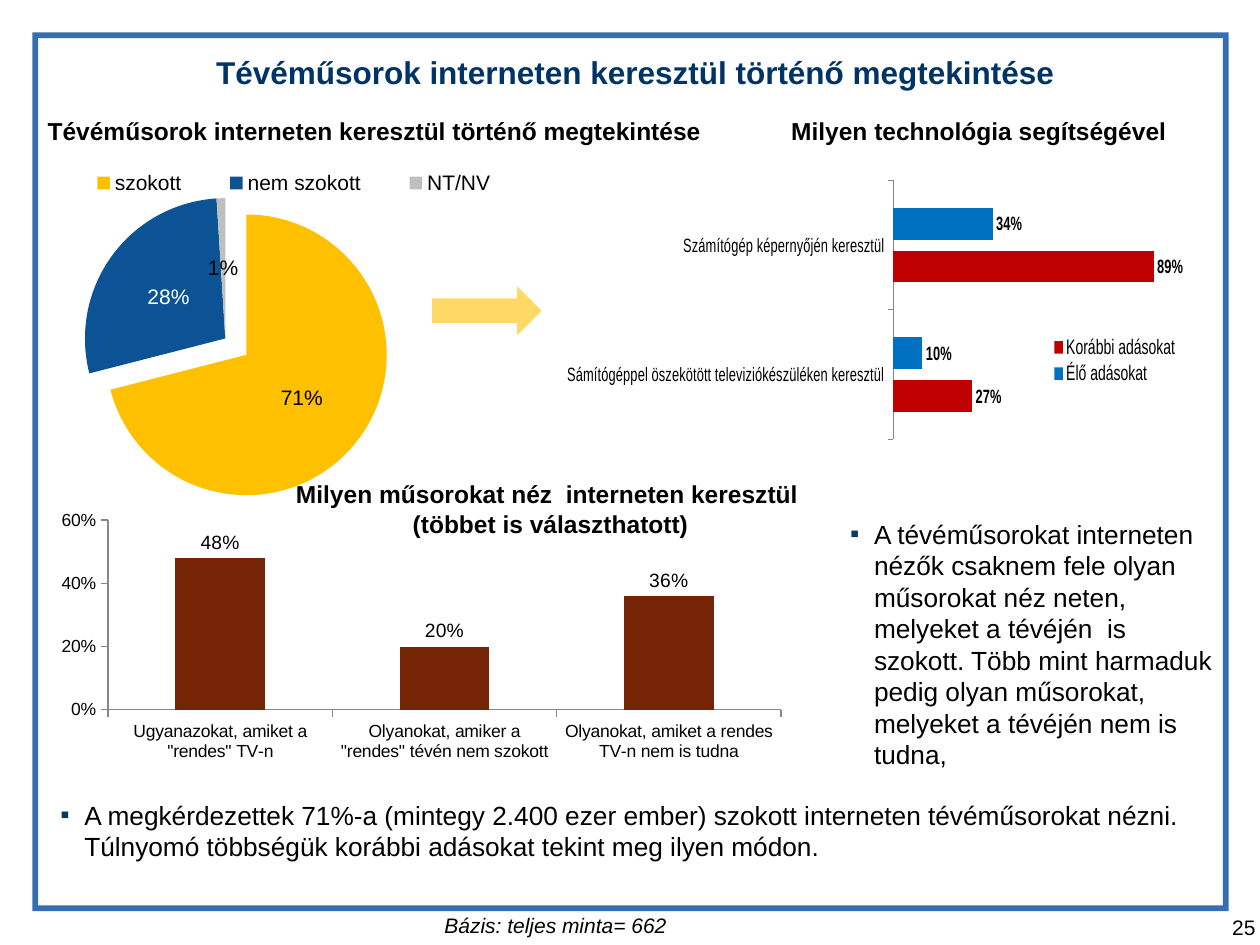
from lxml import etree
from pptx import Presentation
from pptx import util as u
from pptx.chart.data import CategoryChartData
from pptx.dml.color import RGBColor
from pptx.enum import chart as ch, shapes, text
from pptx.oxml import parse_xml
from pptx.oxml.ns import nsdecls, qn

BLACK = RGBColor(0, 0, 0)
WHITE = RGBColor(255, 255, 255)
NAVY = RGBColor(0x00, 0x33, 0x66)
FRAME_BLUE = RGBColor(0x09, 0x4F, 0xA3)
AMBER = RGBColor(0xFF, 0xC0, 0x00)
DEEP_BLUE = RGBColor(0x0B, 0x53, 0x94)
SILVER = RGBColor(0xBF, 0xBF, 0xBF)
BLUE = RGBColor(0x00, 0x70, 0xC0)
RED = RGBColor(0xC0, 0x00, 0x00)
BROWN = RGBColor(0x75, 0x25, 0x05)
PALE_AMBER = RGBColor(0xFF, 0xD9, 0x66)
AXIS_GREY = RGBColor(0x86, 0x86, 0x86)
BULLET_COLOR = RGBColor(0x07, 0x37, 0x63)

FRAME = (0.71, 0.71, 24, 17.6)
ARROW = (8.71, 5.77, 2.21, 0.99)

HEADING = dict(size=14, bold=True, wrap=False)
BULLET = dict(size=15, bullet="▪")
TEXTS = [
    ("Tévéműsorok interneten keresztül történő megtekintése", (0.71, 0.71, 24, 1.5),
     dict(size=18, bold=True, color=NAVY, align=text.PP_ALIGN.CENTER,
          anchor=text.MSO_ANCHOR.MIDDLE, margins=(0.2, 0, 0, 0))),
    ("Tévéműsorok interneten keresztül történő megtekintése", (0.71, 2.21, 13.74, 0.86), HEADING),
    ("Milyen technológia segítségével", (15.7, 2.21, 8.1, 0.86), HEADING),
    ("Milyen műsorokat néz  interneten keresztül \v(többet is választhatott)",
     (5.69, 9.53, 10.82, 1.45), dict(HEADING, align=text.PP_ALIGN.CENTER)),
    ("Bázis: teljes minta= 662", (8.71, 18.26, 5.03, 0.76), dict(size=12, italic=True, wrap=False)),
    ("A megkérdezettek 71%-a (mintegy 2.400 ezer ember) szokott interneten tévéműsorokat "
     "nézni. Túlnyomó többségük korábbi adásokat tekint meg ilyen módon.",
     (0.97, 15.98, 23.55, 1.55), BULLET),
    ("A tévéműsorokat interneten nézők csaknem fele olyan műsorokat néz neten, melyeket a "
     "tévéjén  is szokott. Több mint harmaduk pedig olyan műsorokat, melyeket a tévéjén "
     "nem is tudna,", (16.89, 10.31, 7.82, 5.38), BULLET),
    ("25", (23.88, 18.31, 1.68, 0.69), dict(size=12, align=text.PP_ALIGN.RIGHT)),
]

VIEWING = [("szokott", 71, AMBER), ("nem szokott", 28, DEEP_BLUE), ("NT/NV", 1, SILVER)]
TECHNOLOGY = ["Számítógép képernyőjén keresztül",
              "Sámítógéppel öszekötött televiziókészüléken keresztül"]
TECHNOLOGY_USE = [("Élő adásokat", (0.34, 0.10), BLUE), ("Korábbi adásokat", (0.89, 0.27), RED)]
PROGRAMMES = ['Ugyanazokat, amiket a "rendes" TV-n',
              'Olyanokat, amiker a "rendes" tévén nem szokott',
              "Olyanokat, amiket a rendes TV-n nem is tudna"]
PROGRAMME_USE = [("Műsorok", (0.48, 0.20, 0.36), BROWN)]


def cm(box):
    return [u.Cm(length) for length in box]


def style_font(font, size, color=BLACK, bold=False, italic=False):
    font.name, font.size = "Arial", u.Pt(size)
    font.bold, font.italic = bold, italic
    font.color.rgb = color


def add_text(slide, content, box, size, color=BLACK, bold=False, italic=False, wrap=True,
             align=text.PP_ALIGN.LEFT, anchor=text.MSO_ANCHOR.TOP,
             margins=(0.25, 0.13, 0.25, 0.13), bullet=None):
    frame = slide.shapes.add_textbox(*cm(box)).text_frame
    frame.word_wrap, frame.vertical_anchor = wrap, anchor
    frame.margin_left, frame.margin_top, frame.margin_right, frame.margin_bottom = cm(margins)
    paragraph = frame.paragraphs[0]
    paragraph.text, paragraph.alignment = content, align
    if bullet:
        properties = paragraph._p.get_or_add_pPr()
        properties.set("marL", str(u.Cm(0.48)))
        properties.set("indent", str(-u.Cm(0.48)))
        bullet_color = etree.SubElement(properties, qn("a:buClr"))
        etree.SubElement(bullet_color, qn("a:srgbClr"), val=str(BULLET_COLOR))
        etree.SubElement(properties, qn("a:buFont"), typeface="Arial")
        etree.SubElement(properties, qn("a:buChar"), char=bullet)
    for run in paragraph.runs:
        style_font(run.font, size, color, bold, italic)


def manual_layout(x, y, w, h, inner=False):
    target = '<c:layoutTarget val="inner"/>' if inner else ""
    sizes = "".join(f'<c:{tag} val="{value}"/>' for tag, value in zip("xywh", (x, y, w, h)))
    return parse_xml(f'<c:layout {nsdecls("c")}><c:manualLayout>{target}<c:xMode val="edge"/>'
                     f'<c:yMode val="edge"/>{sizes}</c:manualLayout></c:layout>')


def add_chart(slide, kind, box, categories, series, plot_layout, size, bold=False):
    data = CategoryChartData()
    data.categories = categories
    for name, values, _ in series:
        data.add_series(name, values)
    chart = slide.shapes.add_chart(kind, *cm(box), data).chart
    chart.has_title = chart.has_legend = False
    style_font(chart.font, size, bold=bold)
    area = chart._chartSpace.chart.plotArea
    for old in area.findall(qn("c:layout")):
        area.remove(old)
    area.insert(0, manual_layout(*plot_layout, inner=True))
    return chart


def add_legend(chart, position, layout, overlay):
    chart.has_legend = True
    chart.legend.position = position
    chart.legend.include_in_layout = overlay
    style_font(chart.legend.font, 12)
    chart.legend._element.find(qn("c:legendPos")).addnext(manual_layout(*layout))


def style_labels(labels, size, position, bold=False):
    labels.number_format, labels.number_format_is_linked = "0%", False
    labels.position = position
    style_font(labels.font, size, bold=bold)


def style_axis(axis, size):
    axis.has_major_gridlines = False
    axis.major_tick_mark = ch.XL_TICK_MARK.OUTSIDE
    axis.format.line.color.rgb = AXIS_GREY
    style_font(axis.tick_labels.font, size)


def add_bars(slide, kind, box, categories, series, plot_layout, gap, overlap, maximum,
             axis_size, bold=False):
    chart = add_chart(slide, kind, box, categories, series, plot_layout, 12, bold)
    plot = chart.plots[0]
    plot.gap_width, plot.overlap, plot.vary_by_categories = gap, overlap, False
    for bars, (_, _, color) in zip(plot.series, series):
        bars.format.fill.solid()
        bars.format.fill.fore_color.rgb = color
        bars.invert_if_negative = False
        style_labels(bars.data_labels, 11, ch.XL_LABEL_POSITION.OUTSIDE_END, bold)
        bars.data_labels.show_value = True
    for axis in (chart.category_axis, chart.value_axis):
        style_axis(axis, axis_size)
    values = chart.value_axis
    values.minimum_scale, values.maximum_scale, values.major_unit = 0, maximum, 0.2
    values.tick_labels.number_format = "0%"
    values.tick_labels.number_format_is_linked = False
    return chart


def add_viewing_pie(slide):
    names, shares, colors = zip(*VIEWING)
    chart = add_chart(slide, ch.XL_CHART_TYPE.PIE, (0.76, 2.39, 12.01, 7.65), names,
                      [("Megtekintés", shares, None)], (0.01, 0.21, 0.61, 0.74), 12)
    add_legend(chart, ch.XL_LEGEND_POSITION.TOP, (0.03, 0.12, 0.8, 0.1), False)
    chart.plots[0].vary_by_categories = True
    slices = chart.plots[0].series[0]
    for index, color in enumerate(colors):
        fill = slices.points[index].format.fill
        fill.solid()
        fill.fore_color.rgb = color
    explosion = parse_xml(f'<c:explosion {nsdecls("c")} val="19"/>')
    slices._element.find(qn("c:dPt")).find(qn("c:spPr")).addprevious(explosion)
    style_labels(slices.data_labels, 12, ch.XL_LABEL_POSITION.CENTER)
    not_viewing = slices.points[1].data_label
    style_font(not_viewing.font, 12, WHITE)
    not_viewing.position = ch.XL_LABEL_POSITION.CENTER
    for tag, shown in (("c:showVal", "0"), ("c:showPercent", "1")):
        for flag in slices._element.iter(qn(tag)):
            flag.set("val", shown)


def add_shape(slide, kind, box):
    shape = slide.shapes.add_shape(kind, *cm(box))
    shape.shadow.inherit = False
    return shape


def main():
    deck = Presentation()
    deck.slide_width, deck.slide_height = u.Cm(25.4), u.Cm(19.05)
    slide = deck.slides.add_slide(deck.slide_layouts[6])

    border = add_shape(slide, shapes.MSO_SHAPE.RECTANGLE, FRAME)
    border.fill.background()
    border.line.color.rgb = FRAME_BLUE
    border.line.width = u.Pt(3.25)
    outline = border.line._ln
    etree.SubElement(outline.find(".//" + qn("a:srgbClr")), qn("a:alpha"), val="81000")
    etree.SubElement(outline, qn("a:miter"), lim="800000")

    add_viewing_pie(slide)
    technology = add_bars(slide, ch.XL_CHART_TYPE.BAR_CLUSTERED, (11.43, 3.53, 13, 5.38),
                          TECHNOLOGY, TECHNOLOGY_USE, (0.26, 0.02, 0.68, 0.97),
                          172, -35, 1, 11, bold=True)
    technology.category_axis.reverse_order = True
    technology.value_axis.visible = False
    add_legend(technology, ch.XL_LEGEND_POSITION.RIGHT, (0.62, 0.59, 0.31, 0.21), True)

    programmes = add_bars(slide, ch.XL_CHART_TYPE.COLUMN_CLUSTERED, (0.99, 9.53, 23.8, 6.83),
                          PROGRAMMES, PROGRAMME_USE, (0.05, 0.14, 0.57, 0.56),
                          150, 0, 0.6, 10)
    label_body = programmes.category_axis._element.find(".//" + qn("a:bodyPr"))
    label_body.set("rot", "0")
    label_body.set("vert", "horz")

    arrow = add_shape(slide, shapes.MSO_SHAPE.RIGHT_ARROW, ARROW)
    arrow.fill.solid()
    arrow.fill.fore_color.rgb = PALE_AMBER
    arrow.line.fill.background()

    for content, box, style in TEXTS:
        add_text(slide, content, box, **style)
    deck.save("out.pptx")


if __name__ == "__main__":
    main()
